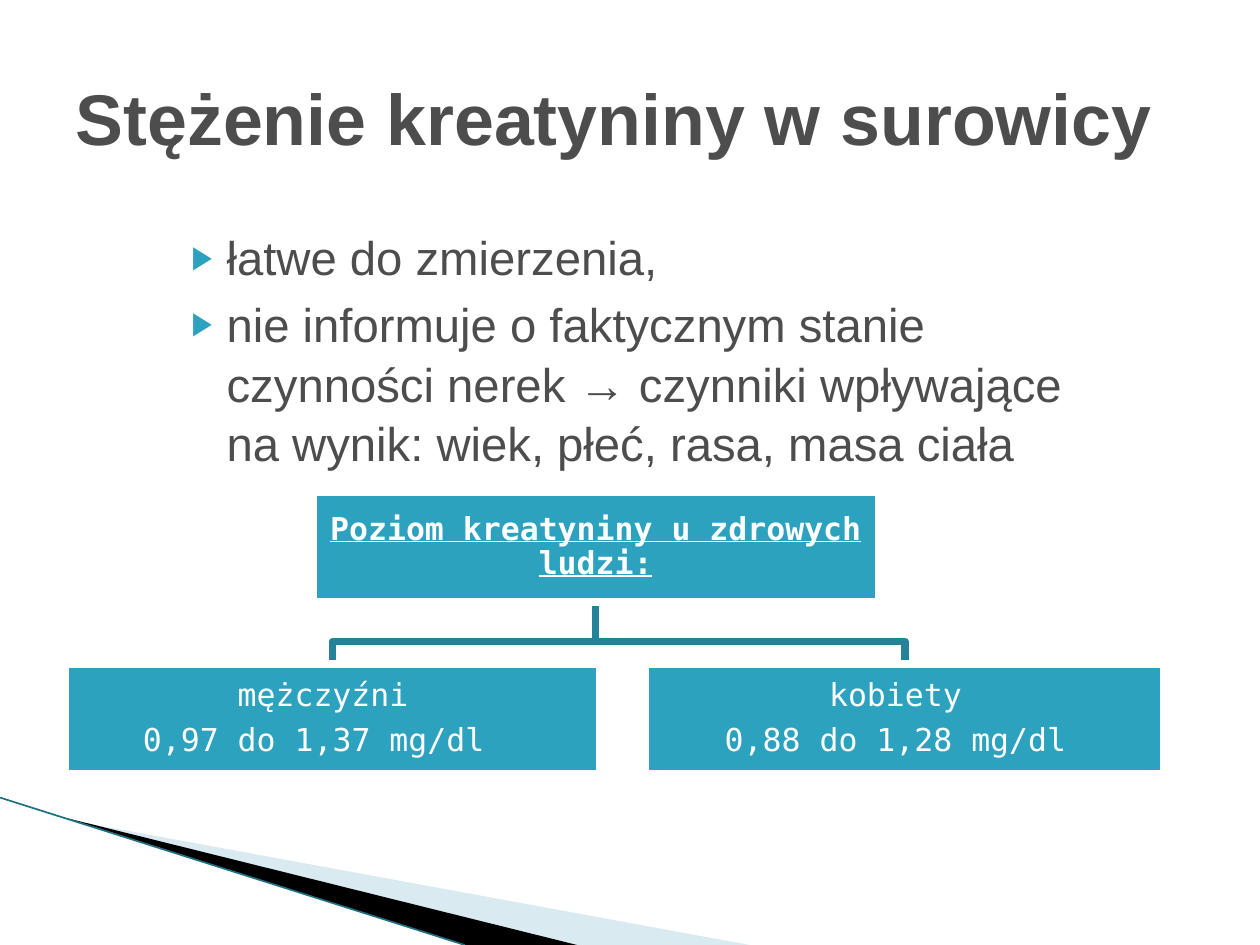
from collections import namedtuple
from lxml.etree import SubElement as Sub
from pptx import Presentation
from pptx.dml.color import RGBColor as RGB
from pptx.enum.shapes import MSO_CONNECTOR as LINE, MSO_SHAPE as SHAPE
from pptx.enum.text import MSO_ANCHOR as ANCHOR, PP_ALIGN as ALIGN
from pptx.oxml.ns import qn
from pptx.util import Inches, Pt

Box = namedtuple("Box", "x y w h")
PAGE = Box(0, 0, 10, 7.5)
THEME = {
    "ink": "4D4D4D", "fill": "2DA2BF", "link": "248299", "white": "FFFFFF",
    "pale": "A0CBDC", "black": "000000", "edge": "1F6F80",
    "sans": "Arial", "mono": "DejaVu Sans Mono",
    "title": 41, "body": 27, "node": 18, "stroke": 4.33, "hair": 0.95,
}


def rgb(name):
    return RGB.from_string(THEME[name])


def style(item, **values):
    for key, value in values.items():
        setattr(item, key, value)


def inset(frame, left, top, right, bottom):
    style(frame, word_wrap=True, margin_left=Inches(left), margin_top=Inches(top),
          margin_right=Inches(right), margin_bottom=Inches(bottom))


def font(item, face, size, color, **more):
    style(item.font, name=THEME[face], size=Pt(THEME[size]), **more)
    item.font.color.rgb = rgb(color)


def part(box, x, y, w, h):
    """Return a box given as shares of another box."""
    return Box(box.x + x * box.w, box.y + y * box.h, w * box.w, h * box.h)


def place(box):
    return [Inches(v) for v in box]


def path(slide, box, points, close):
    """Draw an outline whose points are shares of the box."""
    spots = [(round((box.x + x * box.w) * 1000), round((box.y + y * box.h) * 1000))
             for x, y in points]
    pen = slide.shapes.build_freeform(*spots[0], scale=914.4)
    pen.add_line_segments(spots[1:], close=close)
    shape = pen.convert_to_shape()
    shape.shadow.inherit = False
    return shape


def wedge(slide, box, points, color, alpha=100):
    shape = path(slide, box, points, True)
    shape.fill.solid()
    shape.fill.fore_color.rgb = rgb(color)
    shape.line.fill.background()
    tone = shape.fill._xPr.find(qn("a:solidFill"))[0]
    Sub(tone, qn("a:alpha"), val=str(alpha * 1000))


def corner(slide, box):
    wedge(slide, box, [(0.09, 0.15), (1, 1), (0.77, 1)], "pale", 40)
    wedge(slide, box, [(0.09, 0.14), (0.77, 1), (0.62, 1)], "black")
    line = slide.shapes.add_connector(
        LINE.STRAIGHT, Inches(box.x), Inches(box.y),
        Inches(box.x + 0.62 * box.w), Inches(box.y + box.h))
    line.line.color.rgb = rgb("edge")
    line.line.width = Pt(THEME["hair"])
    Sub(line._element.spPr, qn("a:effectLst"))


def heading(slide, box, text):
    title = slide.shapes.title
    style(title, **dict(zip(("left", "top", "width", "height"), place(box))))
    frame = title.text_frame
    frame.text = text
    inset(frame, 0.1, 0.05, 0.1, 0.05)
    frame.vertical_anchor = ANCHOR.MIDDLE
    frame.paragraphs[0].alignment = ALIGN.LEFT
    font(frame.paragraphs[0], "sans", "title", "ink", bold=True)


def bullet(para):
    props = para._p.get_or_add_pPr()
    props.set("marL", str(Inches(0.4)))
    props.set("indent", str(Inches(-0.28)))
    Sub(Sub(props, qn("a:buClr")), qn("a:srgbClr"), val=THEME["fill"])
    Sub(props, qn("a:buSzPct"), val="68000")
    Sub(props, qn("a:buFont"), typeface=THEME["sans"])
    Sub(props, qn("a:buChar"), char="▶")


def points(slide, box, lines):
    frame = slide.shapes.add_textbox(*place(box)).text_frame
    inset(frame, 0.1, 0.09, 0.1, 0.05)
    for i, text in enumerate(lines):
        para = frame.add_paragraph() if i else frame.paragraphs[0]
        para.text = text
        bullet(para)
        style(para, line_spacing=1.05, space_before=Pt(4 if i else 0))
        font(para, "sans", "body", "ink")


def node(slide, box, lines, **more):
    """Draw a chart box; each line is a text and its right margin."""
    shape = slide.shapes.add_shape(SHAPE.RECTANGLE, *place(box))
    shape.shadow.inherit = False
    shape.fill.solid()
    shape.fill.fore_color.rgb = rgb("fill")
    shape.line.color.rgb = rgb("white")
    shape.line.width = Pt(THEME["stroke"])
    frame = shape.text_frame
    inset(frame, 0.01, 0.01, 0.01, 0.01)
    frame.vertical_anchor = ANCHOR.MIDDLE
    for i, (text, gap) in enumerate(lines):
        para = frame.add_paragraph() if i else frame.paragraphs[0]
        para.text = text
        para._p.get_or_add_pPr().set("marR", str(Inches(gap)))
        last = i == len(lines) - 1
        style(para, alignment=ALIGN.CENTER, line_spacing=0.9,
              space_after=Pt(0 if last else 6.3))
        font(para, "mono", "node", "white", **more)


def tree(slide, box, root, leaves):
    tall = 0.39
    top = part(box, 0.225, 0, 0.515, tall)
    spots = [part(box, 0, 1 - tall, 0.486, tall),
             part(box, 0.528, 1 - tall, 0.472, tall)]
    stem = (top.x + top.w / 2 - box.x) / box.w
    for spot in spots:
        end = (spot.x + spot.w / 2 - box.x) / box.w
        link = path(slide, box, [(stem, tall), (stem, 0.53), (end, 0.53),
                                 (end, 1 - tall)], False)
        link.fill.background()
        link.line.color.rgb = rgb("link")
        link.line.width = Pt(THEME["stroke"])
    node(slide, top, [(root, 0)], bold=True, underline=True)
    for spot, lines in zip(spots, leaves):
        node(slide, spot, lines)


def main():
    deck = Presentation()
    style(deck, slide_width=Inches(PAGE.w), slide_height=Inches(PAGE.h))
    slide = deck.slides.add_slide(deck.slide_layouts[5])
    corner(slide, part(PAGE, 0, 0.844, 0.595, 0.156))
    heading(slide, part(PAGE, 0.05, 0.04, 0.9, 0.167), "Stężenie kreatyniny w surowicy")
    points(slide, part(PAGE, 0.13, 0.227, 0.741, 0.255), [
        "łatwe do zmierzenia,",
        "nie informuje o faktycznym stanie czynności nerek → czynniki "
        "wpływające na wynik: wiek, płeć, rasa, masa ciała",
    ])
    tree(slide, part(PAGE, 0.052, 0.521, 0.872, 0.298),
         "Poziom kreatyniny u zdrowych ludzi:",
         [[("mężczyźni", 0.15), ("0,97 do 1,37 mg/dl", 0.3)],
          [("kobiety", 0.15), ("0,88 do 1,28 mg/dl", 0.15)]])
    deck.save("out.pptx")


if __name__ == "__main__":
    main()
